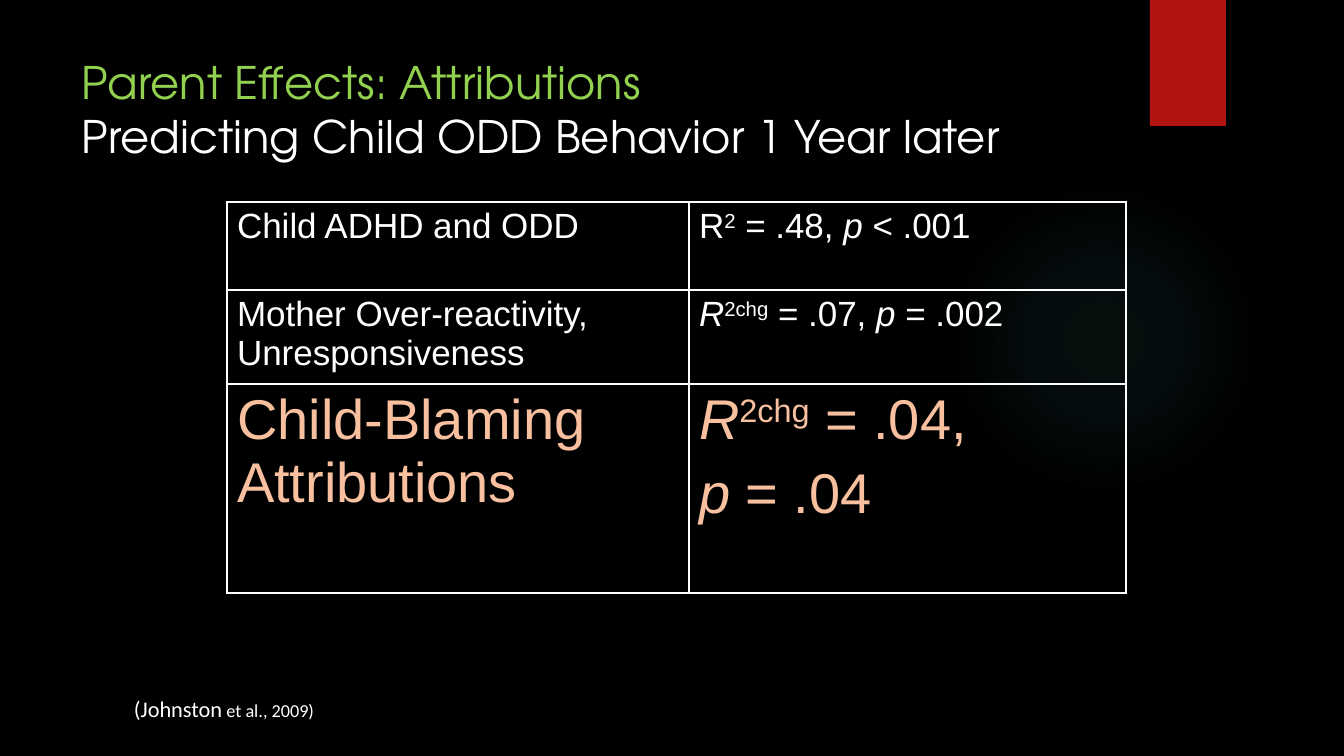
from lxml import etree
from pptx import Presentation
from pptx import util as u
from pptx.dml.color import RGBColor
from pptx.enum import shapes, text
from pptx.oxml import ns, parse_xml

PX = 914400 / 100.8
BLACK = RGBColor(0x00, 0x00, 0x00)
WHITE = RGBColor(0xFF, 0xFF, 0xFF)
GREEN = RGBColor(0x92, 0xD0, 0x50)
RED = RGBColor(0xB0, 0x15, 0x13)
PEACH = RGBColor(0xF8, 0xC0, 0x9F)
TEAL = RGBColor(0x50, 0xB9, 0xC1)
GLOW_STOPS = [(0, 7), (36, 6), (69, 0), (100, 0)]
COLUMNS = [462, 437]
ROWS = [88, 88, 209]
SUP, ITALIC = "sup", "italic"
FINDINGS = [
    ([[("Child ADHD and ODD", None)]],
     [[("R", None), ("2", SUP), (" = .48, ", None), ("p", ITALIC), (" < .001", None)]]),
    ([[("Mother Over-reactivity, Unresponsiveness", None)]],
     [[("R", ITALIC), ("2chg", SUP), (" = .07, ", None), ("p", ITALIC), (" = .002", None)]]),
    ([[("Child-Blaming Attributions", None)]],
     [[("R", ITALIC), ("2chg", SUP), (" = .04,", None)],
      [("p", ITALIC), (" = .04", None)]]),
]


def px(length):
    return u.Emu(round(length * PX))


def add_text(paragraph, words, font="Arial", size=25, color=WHITE, style=None):
    run = paragraph.add_run()
    run.text = words
    run.font.name = font
    run.font.size = u.Pt(size)
    run.font.color.rgb = color
    if style == ITALIC:
        run.font.italic = True
    if style == SUP:
        run.font._element.set("baseline", "30000")


def add_block(slide, shape, left, top, width, height):
    block = slide.shapes.add_shape(shape, px(left), px(top), px(width), px(height))
    block.shadow.inherit = False
    block.line.fill.background()
    block.fill.solid()
    block.fill.fore_color.rgb = RED
    return block


def add_glow(slide):
    glow = add_block(slide, shapes.MSO_SHAPE.OVAL, 949, 184, 310, 310)
    stops = "".join(
        f'<a:gs pos="{pos * 1000}"><a:srgbClr val="{TEAL}">'
        f'<a:alpha val="{alpha * 1000}"/></a:srgbClr></a:gs>'
        for pos, alpha in GLOW_STOPS)
    gradient = parse_xml(
        f'<a:gradFill {ns.nsdecls("a")} rotWithShape="1"><a:gsLst>{stops}</a:gsLst>'
        '<a:path path="circle"><a:fillToRect l="50000" t="50000" r="50000" b="50000"/>'
        '</a:path></a:gradFill>')
    properties = glow._element.spPr
    properties.replace(properties.find(ns.qn("a:solidFill")), gradient)


def add_box(slide, left, top, width, height, wrap=True):
    frame = slide.shapes.add_textbox(px(left), px(top), px(width), px(height)).text_frame
    frame.word_wrap = wrap
    frame.vertical_anchor = text.MSO_ANCHOR.TOP
    return frame


def set_borders(cell, widths):
    properties = cell._tc.get_or_add_tcPr()
    for position, (side, width) in enumerate(widths.items()):
        line = etree.Element(ns.qn(f"a:{side}"), w=str(u.Pt(width)))
        fill = etree.SubElement(line, ns.qn("a:solidFill"))
        etree.SubElement(fill, ns.qn("a:srgbClr"), val=str(WHITE))
        properties.insert(position, line)


def fill_cell(cell, paragraphs, size, color):
    cell.fill.background()
    frame = cell.text_frame
    for index, runs in enumerate(paragraphs):
        paragraph = frame.add_paragraph() if index else frame.paragraphs[0]
        if index:
            paragraph.space_before = u.Pt(size * 0.2)
        for words, style in runs:
            add_text(paragraph, words, size=size, color=color, style=style)


def add_findings(slide):
    table = slide.shapes.add_table(len(ROWS), len(COLUMNS), px(227), px(202),
                                   px(sum(COLUMNS)), px(sum(ROWS))).table
    table.first_row = False
    table.horz_banding = False
    for column, width in zip(table.columns, COLUMNS):
        column.width = px(width)
    last = len(ROWS) - 1
    for r, (height, finding) in enumerate(zip(ROWS, FINDINGS)):
        table.rows[r].height = px(height)
        size, color = (40, PEACH) if r == last else (25, WHITE)
        for c, paragraphs in enumerate(finding):
            cell = table.cell(r, c)
            fill_cell(cell, paragraphs, size, color)
            set_borders(cell, {"lnL": 1 if c else 2.25, "lnR": 2.25 if c else 1,
                               "lnT": 1, "lnB": 2.25 if r == last else 1})


def main():
    deck = Presentation()
    deck.slide_width, deck.slide_height = px(1344), px(756)
    slide = deck.slides.add_slide(deck.slide_layouts[6])
    slide.background.fill.solid()
    slide.background.fill.fore_color.rgb = BLACK

    add_glow(slide)
    add_block(slide, shapes.MSO_SHAPE.RECTANGLE, 1150, 0, 76, 126)

    title = add_box(slide, 72, 50, 1037, 154).paragraphs[0]
    add_text(title, "Parent Effects: Attributions", font="TeX Gyre Adventor", size=32, color=GREEN)
    title.add_line_break()
    add_text(title, "Predicting Child ODD Behavior 1 Year later", font="TeX Gyre Adventor", size=32)

    add_findings(slide)

    citation = add_box(slide, 124, 690, 204, 37, wrap=False).paragraphs[0]
    add_text(citation, "(Johnston", font="Calibri", size=16)
    add_text(citation, " et al., 2009)", font="Calibri", size=13)

    deck.save("out.pptx")


if __name__ == "__main__":
    main()
